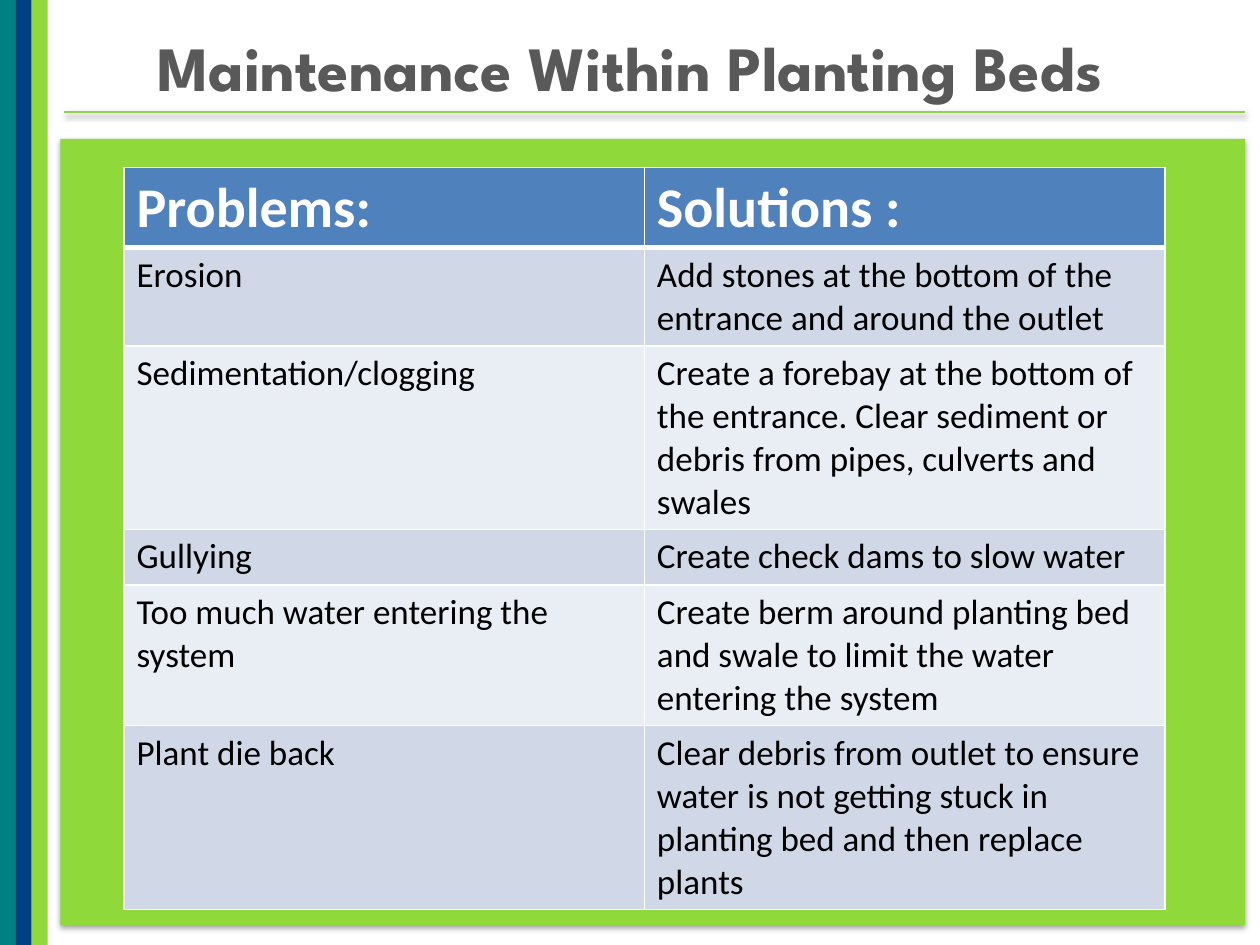
from lxml.etree import SubElement
from pptx import Presentation
from pptx.dml.color import RGBColor
from pptx.enum.shapes import MSO_CONNECTOR, MSO_SHAPE
from pptx.enum.text import MSO_ANCHOR, PP_ALIGN
from pptx.oxml import parse_xml
from pptx.oxml.ns import nsdecls, qn
from pptx.util import Cm, Pt

TEAL = RGBColor(0x00, 0x80, 0x80)
NAVY = RGBColor(0x00, 0x40, 0x80)
GREEN = RGBColor(0x8F, 0xD9, 0x3B)
RULE_GREEN = RGBColor(0x92, 0xD0, 0x50)
GREY = RGBColor(0x59, 0x59, 0x59)
HEADER_BLUE = RGBColor(0x4F, 0x81, 0xBD)
BAND_DARK = RGBColor(0xD0, 0xD8, 0xE8)
BAND_LIGHT = RGBColor(0xE9, 0xED, 0xF4)
WHITE = RGBColor(0xFF, 0xFF, 0xFF)
BLACK = RGBColor(0x00, 0x00, 0x00)

SLIDE_HEIGHT = 19.05
STRIPE_WIDTH = 0.32
ROW_HEIGHTS = (1.6, 1.98, 3.7, 1.12, 2.84, 3.7)
ADVICE = (
    ("Problems:", "Solutions :"),
    ("Erosion", "Add stones at the bottom of the entrance and around the outlet"),
    ("Sedimentation/clogging",
     "Create a forebay at the bottom of the entrance. "
     "Clear sediment or debris from pipes, culverts and swales"),
    ("Gullying", "Create check dams to slow water"),
    ("Too much water entering the system",
     "Create berm around planting bed and swale to limit the water entering the system"),
    ("Plant die back",
     "Clear debris from outlet to ensure water is not getting stuck in planting bed "
     "and then replace plants"),
)


def add_rectangle(slide, left, top, width, height, color):
    """Add a plain filled rectangle measured in centimetres."""
    rectangle = slide.shapes.add_shape(
        MSO_SHAPE.RECTANGLE, Cm(left), Cm(top), Cm(width), Cm(height))
    rectangle.fill.solid()
    rectangle.fill.fore_color.rgb = color
    rectangle.line.fill.background()
    rectangle.shadow.inherit = False
    return rectangle


def cast_shadow(element, distance, opacity):
    """Give a shape or connector a soft black shadow falling downwards."""
    properties = element.spPr
    for effects in properties.findall(qn("a:effectLst")):
        properties.remove(effects)
    properties.append(parse_xml(
        f'<a:effectLst {nsdecls("a")}><a:outerShdw blurRad="{Pt(3.1)}" '
        f'dist="{Pt(distance)}" dir="5400000" rotWithShape="0"><a:srgbClr val="000000">'
        f'<a:alpha val="{opacity * 1000}"/></a:srgbClr></a:outerShdw></a:effectLst>'))


def add_run(paragraph, text, font_name, size, color, bold):
    """Append one formatted run to a paragraph."""
    run = paragraph.add_run()
    run.text = text
    run.font.name = font_name
    run.font.size = Pt(size)
    run.font.color.rgb = color
    run.font.bold = bold


def add_title(slide, text):
    """Add the centred slide title."""
    title = slide.shapes.add_textbox(Cm(0.5), Cm(0.46), Cm(24.4), Cm(3.2))
    frame = title.text_frame
    frame.word_wrap = True
    frame.vertical_anchor = MSO_ANCHOR.TOP
    heading = frame.paragraphs[0]
    heading.alignment = PP_ALIGN.CENTER
    add_run(heading, text, "League Spartan", 36, GREY, True)


def add_rule(slide):
    """Add the thin shadowed line below the title."""
    rule = slide.shapes.add_connector(
        MSO_CONNECTOR.STRAIGHT, Cm(1.3), Cm(2.26), Cm(25.1), Cm(2.26))
    rule.line.color.rgb = RULE_GREEN
    rule.line.width = Pt(1)
    cast_shadow(rule._element, 1.6, 38)


def border_cell(cell, top, bottom):
    """Draw white borders round a cell, one point wide at the sides."""
    properties = cell._tc.get_or_add_tcPr()
    for side, width in (("L", 1), ("R", 1), ("T", top), ("B", bottom)):
        border = SubElement(properties, qn(f"a:ln{side}"), w=str(Pt(width)))
        fill = SubElement(border, qn("a:solidFill"))
        SubElement(fill, qn("a:srgbClr"), val=str(WHITE))


def add_advice_table(slide):
    """Add the table of problems and their solutions."""
    table = slide.shapes.add_table(
        len(ADVICE), 2, Cm(2.5), Cm(3.38), Cm(20.98), Cm(sum(ROW_HEIGHTS))).table
    for row_number, (texts, height) in enumerate(zip(ADVICE, ROW_HEIGHTS)):
        table.rows[row_number].height = Cm(height)
        is_header = row_number == 0
        band = BAND_DARK if row_number % 2 else BAND_LIGHT
        size, color = (32, WHITE) if is_header else (20, BLACK)
        for column, text in enumerate(texts):
            cell = table.cell(row_number, column)
            border_cell(cell, 3 if row_number == 1 else 1, 3 if is_header else 1)
            cell.fill.solid()
            cell.fill.fore_color.rgb = HEADER_BLUE if is_header else band
            add_run(cell.text_frame.paragraphs[0], text, "Calibri", size, color, is_header)


def main():
    """Build and save the slide."""
    presentation = Presentation()
    presentation.slide_width = Cm(25.4)
    presentation.slide_height = Cm(SLIDE_HEIGHT)
    slide = presentation.slides.add_slide(presentation.slide_layouts[6])
    for position, color in enumerate((TEAL, NAVY, GREEN)):
        add_rectangle(slide, position * STRIPE_WIDTH, 0, STRIPE_WIDTH, SLIDE_HEIGHT, color)
    panel = add_rectangle(slide, 1.22, 2.8, 23.88, 15.85, GREEN)
    cast_shadow(panel._element, 1.8, 35)
    add_title(slide, "Maintenance Within Planting Beds")
    add_advice_table(slide)
    add_rule(slide)
    presentation.save("out.pptx")


if __name__ == "__main__":
    main()
